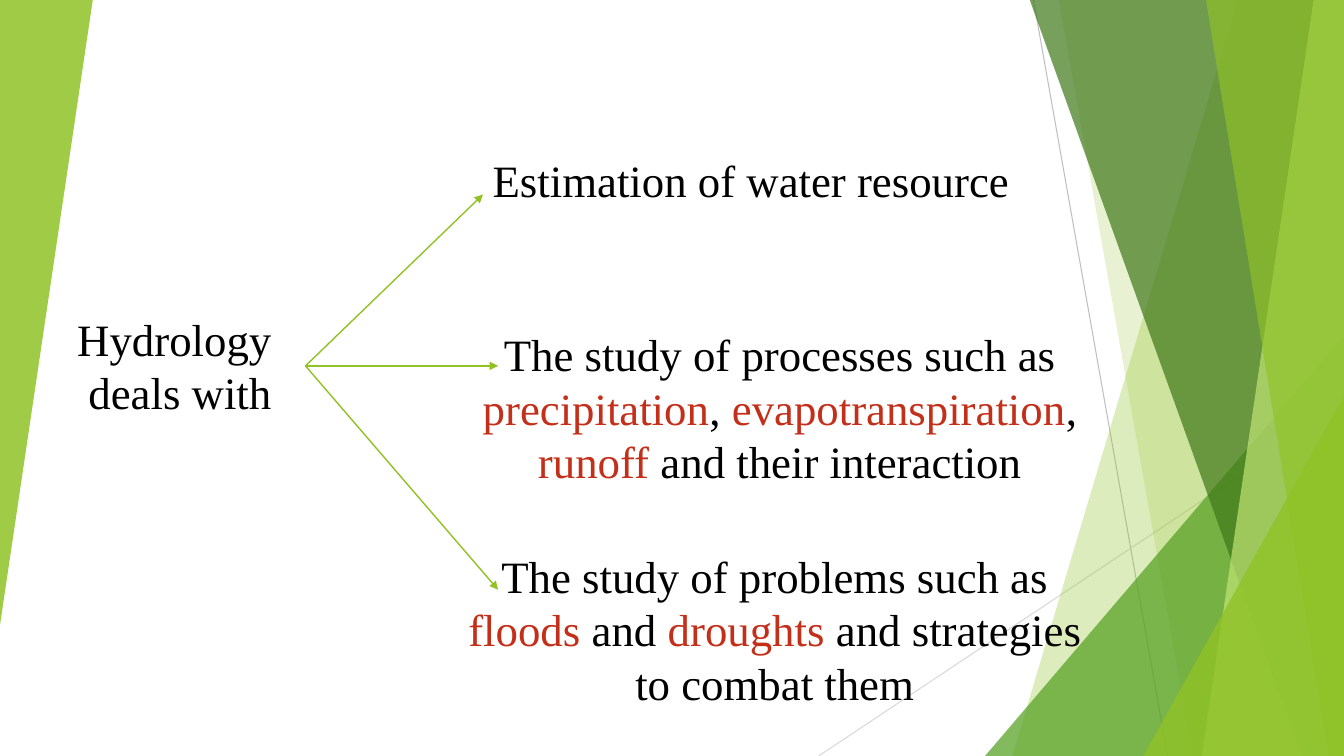
from lxml import etree
from pptx import Presentation
from pptx.dml.color import RGBColor
from pptx.enum import shapes as kinds, text as txt
from pptx.oxml import ns
from pptx.util import Inches, Pt

HUES = {
    "lime": "90C226", "green": "54A021", "dark": "3F7819", "pale": "C0E474",
    "grey": "BFBFBF", "light": "D9D9D9", "black": "000000", "red": "C42F1A",
}
WIDE, HIGH = 13.33, 7.5

prs = Presentation()
prs.slide_width, prs.slide_height = Inches(WIDE), Inches(HIGH)
slide = prs.slides.add_slide(prs.slide_layouts[6])
items = slide.shapes


def paint(shape, hue, alpha):
    """Fill a borderless shape with a hue at alpha percent opacity."""
    shape.shadow.inherit = False
    shape.line.fill.background()
    shape.fill.solid()
    shape.fill.fore_color.rgb = RGBColor.from_string(HUES[hue])
    color = shape.fill._xPr.find(".//" + ns.qn("a:srgbClr"))
    etree.SubElement(color, ns.qn("a:alpha"), val=str(alpha * 1000))


def draw_line(start, end, hue, width):
    line = items.add_connector(
        kinds.MSO_CONNECTOR.STRAIGHT, *[Inches(v) for v in start + end])
    line.line.color.rgb = RGBColor.from_string(HUES[hue])
    line.line.width = Pt(width)
    etree.SubElement(line._element.spPr, ns.qn("a:effectLst"))
    return line


# Background facets, back to front
draw_line((10.25, 0), (11.58, HIGH), "grey", 0.75)
draw_line((WIDE, 4.03), (8.12, HIGH), "light", 0.75)

# Bands: top left x, bottom left x, hue, opacity; triangles: box, turn, hue, opacity
facets = [
    ("band", (12.28, 10.04), 0, "lime", 30),
    ("band", (10.5, 11.83), 0, "lime", 20),
    ("tri", (9.77, 3.33, 3.56, 4.17), 0, "green", 72),
    ("band", (10.21, 12.91), 0, "dark", 70),
    ("band", (13.03, 11.92), 0, "pale", 70),
    ("band", (11.96, 13.18), 0, "lime", 65),
    ("tri", (11.34, 3.93, 1.99, 3.57), 0, "lime", 80),
    ("tri", (0, 0, 0.92, 6.2), 180, "lime", 85),
]
for kind, place, turn, hue, alpha in facets:
    if kind == "band":
        top, base = place
        pen = items.build_freeform(Inches(top), Inches(-0.01))
        pen.add_line_segments([(Inches(x), Inches(y)) for x, y in (
            (WIDE, -0.01), (WIDE, HIGH), (base, HIGH))], close=True)
        facet = pen.convert_to_shape()
    else:
        facet = items.add_shape(
            kinds.MSO_SHAPE.ISOSCELES_TRIANGLE, *[Inches(v) for v in place])
        facet.adjustments[0] = 1
        facet.rotation = turn
    paint(facet, hue, alpha)

# Text boxes with arrow tips; words between bars are red
notes = [
    ((0.54, 3.04, 2.49, 1.18), ["Hydrology ", "deals with"], None),
    ((4.59, 1.47, 5.72, 0.64), ["Estimation of water resource"], (4.79, 1.93)),
    ((4.65, 3.19, 6.17, 1.72),
     ["The study of processes such as |precipitation|, |evapotranspiration|, "
      "|runoff| and their interaction"], (4.94, 3.63)),
    ((4.32, 5.39, 6.73, 1.72),
     ["The study of problems such as |floods| and |droughts| and strategies "
      "to combat them"], (4.94, 5.85)),
]
topic = None
for place, lines, tip in notes:
    if tip:
        arrow = draw_line((3.03, 3.63), tip, "lime", 1)
        arrow.begin_connect(topic, 3)
        etree.SubElement(arrow.line._get_or_add_ln(), ns.qn("a:tailEnd"), type="triangle")
    box = items.add_textbox(*[Inches(v) for v in place])
    topic = topic or box
    frame = box.text_frame
    frame.word_wrap = True
    frame.auto_size = txt.MSO_AUTO_SIZE.SHAPE_TO_FIT_TEXT
    for i, line in enumerate(lines):
        para = frame.add_paragraph() if i else frame.paragraphs[0]
        para.alignment = txt.PP_ALIGN.CENTER
        for j, part in enumerate(line.split("|")):
            run = para.add_run()
            run.text = part
            run.font.name = "Times New Roman"
            run.font.size = Pt(32)
            run.font.color.rgb = RGBColor.from_string(HUES["red" if j % 2 else "black"])

prs.save("out.pptx")
